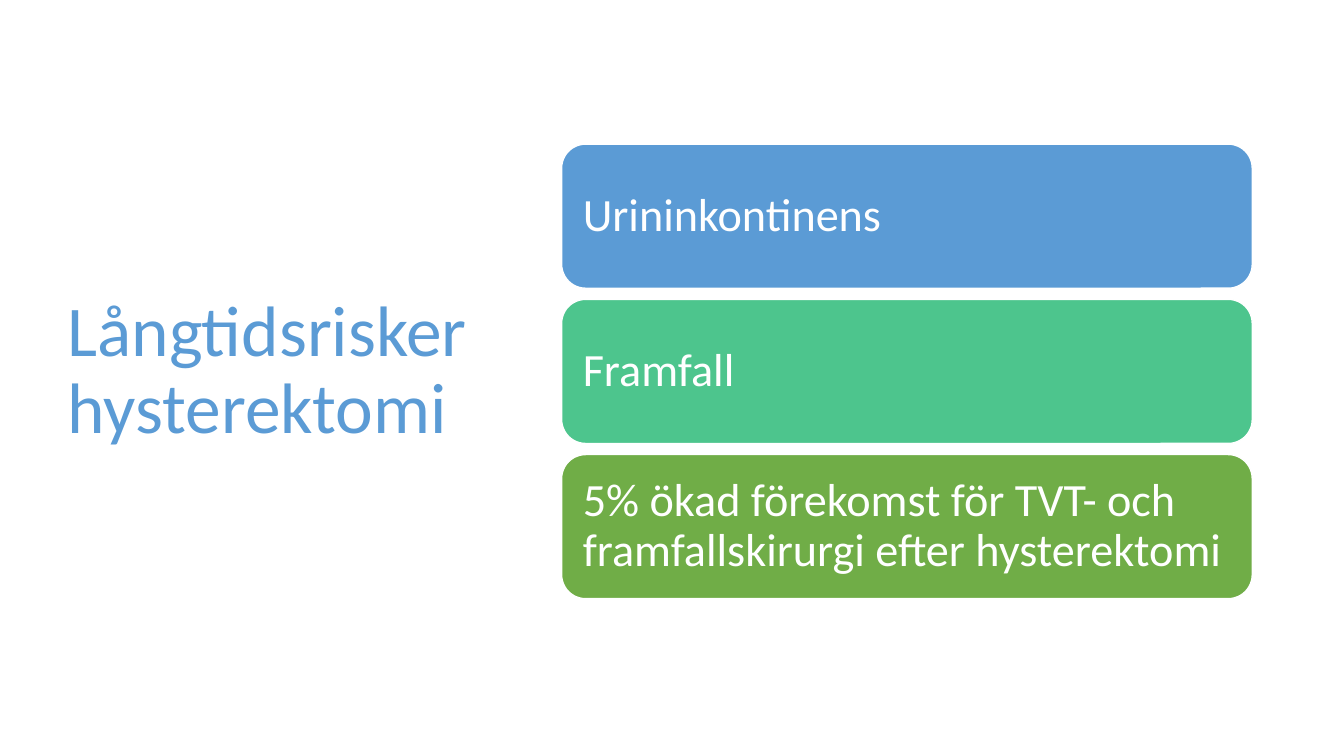
from pptx import Presentation
from pptx.dml.color import RGBColor
from pptx.enum import shapes, text
from pptx.util import Emu, Pt

PX = 9144  # 100 px to the inch
BLUE, TEAL, GREEN, WHITE = "5B9BD5", "4DC58D", "70AD47", "FFFFFF"
RISKS = [
    ("Urininkontinens", BLUE),
    ("Framfall", TEAL),
    ("5% ökad förekomst för TVT- och framfallskirurgi efter hysterektomi", GREEN),
]


def px(length):
    return Emu(length * PX)


def colour(hex_string):
    return RGBColor.from_string(hex_string)


def write(frame, wording, *, size, ink, inset_x=10, inset_y=5):
    """Fill a text frame with one left-aligned, vertically centred paragraph."""
    frame.word_wrap = True
    frame.auto_size = text.MSO_AUTO_SIZE.NONE
    frame.vertical_anchor = text.MSO_ANCHOR.MIDDLE
    frame.margin_left = frame.margin_right = px(inset_x)
    frame.margin_top = frame.margin_bottom = px(inset_y)
    paragraph = frame.paragraphs[0]
    paragraph.alignment = text.PP_ALIGN.LEFT
    paragraph.line_spacing = 0.9
    run = paragraph.add_run()
    run.text = wording
    run.font.name = "Calibri"
    run.font.size = Pt(size)
    run.font.color.rgb = colour(ink)


def add_heading(slide, left, top, width, height):
    heading = slide.shapes.title
    heading.left, heading.top = px(left), px(top)
    heading.width, heading.height = px(width), px(height)
    write(heading.text_frame, "Långtidsrisker hysterektomi", size=51, ink=BLUE)


def add_risk_cards(slide, left, top, width, height, gap=11):
    """Stack one card per risk, evenly spaced over the box."""
    card_height = (height - gap * (len(RISKS) - 1)) // len(RISKS)
    for index, (risk, fill) in enumerate(RISKS):
        card = slide.shapes.add_shape(
            shapes.MSO_SHAPE.ROUNDED_RECTANGLE,
            px(left), px(top + index * (card_height + gap)),
            px(width), px(card_height))
        card.shadow.inherit = False
        card.fill.solid()
        card.fill.fore_color.rgb = colour(fill)
        card.line.color.rgb = colour(WHITE)
        card.line.width = Pt(1)
        write(card.text_frame, risk, size=33, ink=WHITE, inset_x=14, inset_y=14)


def main():
    deck = Presentation()
    deck.slide_width, deck.slide_height = px(1333), px(750)
    slide = deck.slides.add_slide(deck.slide_layouts.get_by_name("Title Only"))
    add_heading(slide, 57, 68, 430, 602)
    add_risk_cards(slide, 557, 143, 685, 451)
    deck.save("out.pptx")


if __name__ == "__main__":
    main()
